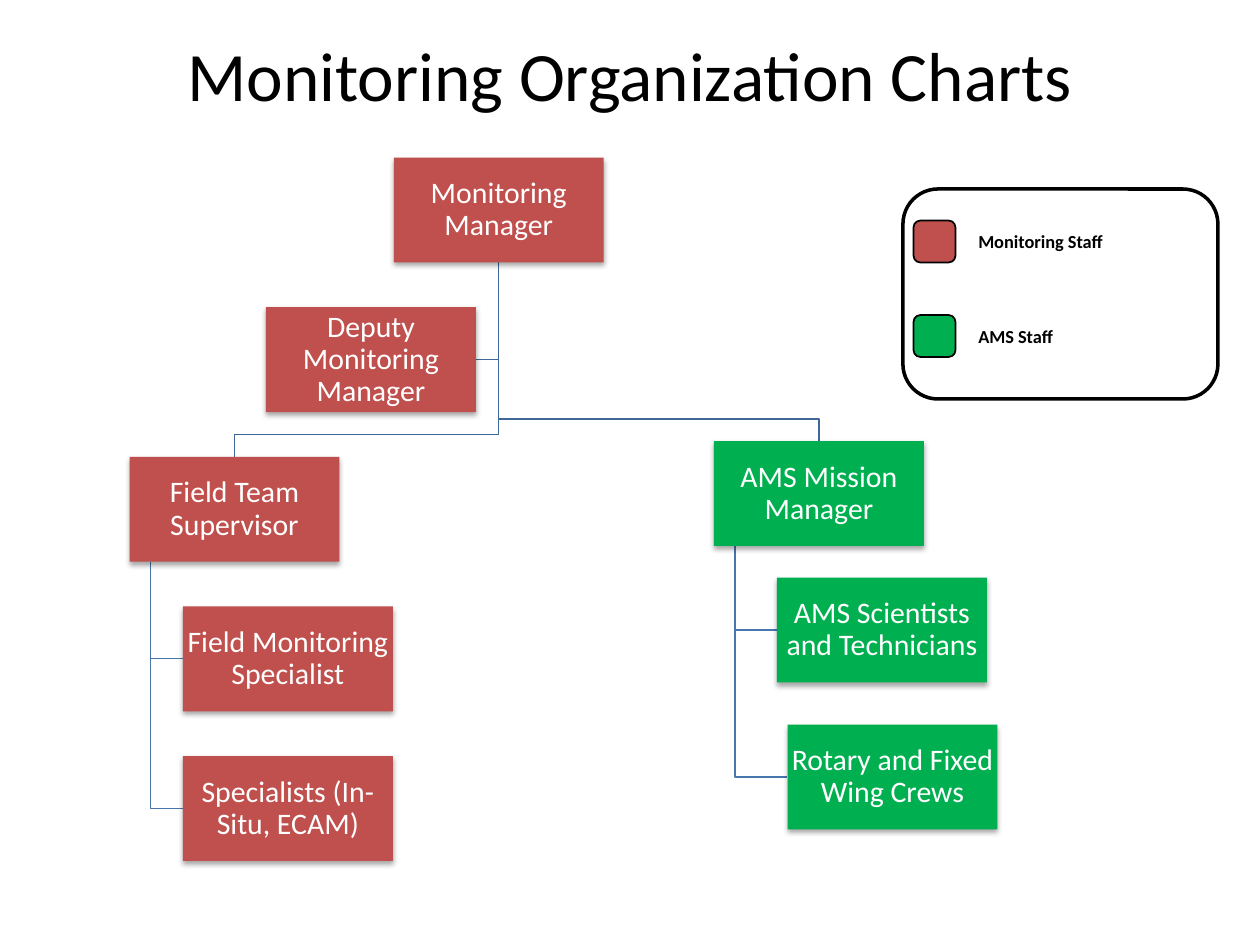
from lxml import etree
from pptx import Presentation
from pptx import util as u
from pptx.dml.color import RGBColor
from pptx.enum import shapes, text
from pptx.oxml.ns import qn

COLORS = {"staff": "C0504D", "ams": "00B050", "trunk": "3F6797",
          "branch": "4875AC", "black": "000000", "white": "FFFFFF"}
FONT = "Calibri"
TITLE = "Monitoring Organization Charts"
BOX_W, BOX_H = 120, 60
INDENT = 12  # distance of a side trunk from its parent's left edge
DROP = 12.6  # height of the last drop onto a child

# Roles: name -> (label, left, top, colour)
TOP, ROW = 90, 85.5
ROLES = {
    "manager": ("Monitoring Manager", 225, TOP, "staff"),
    "deputy": ("Deputy Monitoring Manager", 152, TOP + ROW, "staff"),
    "supervisor": ("Field Team Supervisor", 74, TOP + 2 * ROW, "staff"),
    "field": ("Field Monitoring Specialist", 104.5, TOP + 3 * ROW, "staff"),
    "specialists": ("Specialists (In-Situ, ECAM)", 104.5, TOP + 4 * ROW, "staff"),
    "mission": ("AMS Mission Manager", 408, 252, "ams"),
    "scientists": ("AMS Scientists and Technicians", 444, 330, "ams"),
    "crews": ("Rotary and Fixed Wing Crews", 450, 414, "ams"),
}
# Reporting lines: parent, child, how the line reaches the child
LINKS = [
    ("manager", "deputy", "assistant"),
    ("mission", "crews", "side"),
    ("mission", "scientists", "side"),
    ("manager", "mission", "drop"),
    ("supervisor", "specialists", "side"),
    ("supervisor", "field", "side"),
    ("manager", "supervisor", "drop"),
]
# Legend: label, label width, colour
LEGEND = [("Monitoring Staff", 114, "staff"), ("AMS Staff", 132, "ams")]


def rgb(name):
    return RGBColor.from_string(COLORS[name])


def write(box, words, size, color="black", bold=False, align="LEFT",
          anchor="TOP", spacing=None, insets=(7.2, 3.6)):
    frame = box.text_frame
    frame.word_wrap = True
    frame.vertical_anchor = getattr(text.MSO_ANCHOR, anchor)
    frame.margin_left = frame.margin_right = u.Pt(insets[0])
    frame.margin_top = frame.margin_bottom = u.Pt(insets[1])
    para = frame.paragraphs[0]
    para.alignment = getattr(text.PP_ALIGN, align)
    if spacing:
        para.line_spacing = spacing
    span = para.add_run()
    span.text = words
    span.font.name, span.font.size, span.font.bold = FONT, u.Pt(size), bold
    span.font.color.rgb = rgb(color)


def add_text(page, left, top, width, height, words, **style):
    box = page.shapes.add_textbox(*map(u.Pt, (left, top, width, height)))
    write(box, words, **style)
    return box


def add_block(page, kind, left, top, width, height, fill, line=None):
    block = page.shapes.add_shape(kind, *map(u.Pt, (left, top, width, height)))
    block.shadow.inherit = False
    block.fill.solid()
    block.fill.fore_color.rgb = rgb(fill)
    if line:
        block.line.color.rgb = rgb("black")
        block.line.width = u.Pt(line)
    else:
        block.line.fill.background()
    return block


def add_shadow(block):
    effects = block._element.spPr.find(qn("a:effectLst"))
    shadow = etree.SubElement(effects, qn("a:outerShdw"), blurRad=str(u.Pt(3.1)),
                              dist=str(u.Pt(1.8)), dir="5400000", rotWithShape="0")
    color = etree.SubElement(shadow, qn("a:srgbClr"), val=COLORS["black"])
    etree.SubElement(color, qn("a:alpha"), val="35000")


def route(parent, child, style):
    _, left, top, _ = ROLES[parent]
    _, child_left, child_top, _ = ROLES[child]
    bottom, middle = top + BOX_H, child_top + BOX_H / 2
    center, child_center = left + BOX_W / 2, child_left + BOX_W / 2
    if style == "side":
        trunk = left + INDENT
        return [(trunk, bottom), (trunk, middle), (child_left, middle)]
    if style == "assistant":
        return [(center, bottom), (center, middle), (child_left + BOX_W, middle)]
    bus = child_top - DROP
    return [(center, bottom), (center, bus), (child_center, bus),
            (child_center, child_top)]


def add_path(page, points, color):
    points = [(u.Pt(x), u.Pt(y)) for x, y in points]
    builder = page.shapes.build_freeform(*points[0], scale=1.0)
    builder.add_line_segments(points[1:], close=False)
    path = builder.convert_to_shape()
    path.shadow.inherit = False
    path.fill.background()
    path.line.color.rgb = rgb(color)
    path.line.width = u.Pt(0.75)


def main():
    deck = Presentation()
    deck.slide_width, deck.slide_height = u.Pt(720), u.Pt(540)
    page = deck.slides.add_slide(deck.slide_layouts[6])

    # Title
    add_text(page, 36, 18.5, 648, 90, TITLE, size=39.6, align="CENTER",
             insets=(7.2, 0))

    # Reporting lines, behind the boxes
    for parent, child, style in LINKS:
        color = "branch" if style == "side" else "trunk"
        add_path(page, route(parent, child, style), color)

    # Role boxes
    rect, rounded = shapes.MSO_SHAPE.RECTANGLE, shapes.MSO_SHAPE.ROUNDED_RECTANGLE
    for label, left, top, color in ROLES.values():
        block = add_block(page, rect, left, top, BOX_W, BOX_H, color)
        add_shadow(block)
        write(block, label, size=17, color="white", align="CENTER",
              anchor="MIDDLE", spacing=0.9, insets=(0.75, 0.75))

    # Legend
    add_block(page, rounded, 516, 108, 180, 120, "white", line=2)
    for row, (label, width, color) in enumerate(LEGEND):
        top = 126 + 54 * row
        add_block(page, rounded, 522, top, 24, 24, color, line=1)
        box = add_text(page, 552, top + 2, width, 20, label, size=10.5, bold=True)
        box.text_frame.auto_size = text.MSO_AUTO_SIZE.SHAPE_TO_FIT_TEXT

    deck.save("out.pptx")


if __name__ == "__main__":
    main()
